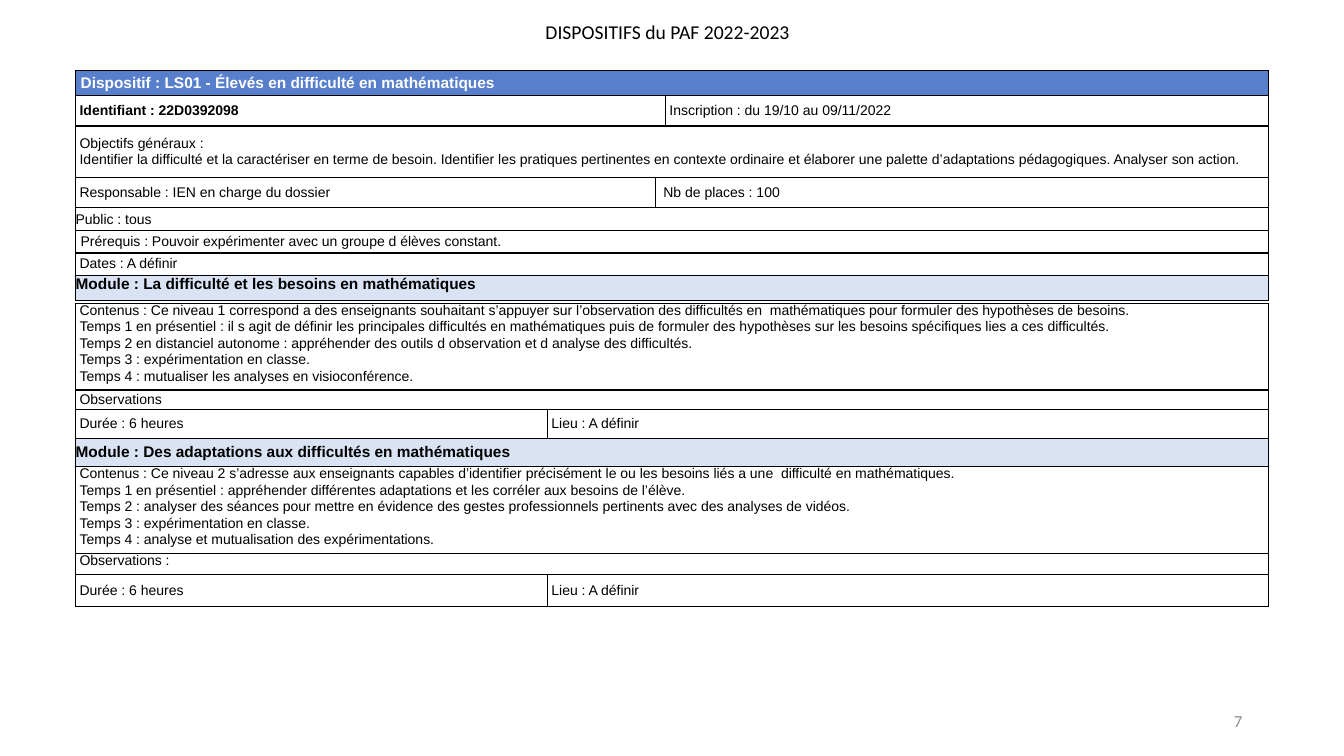
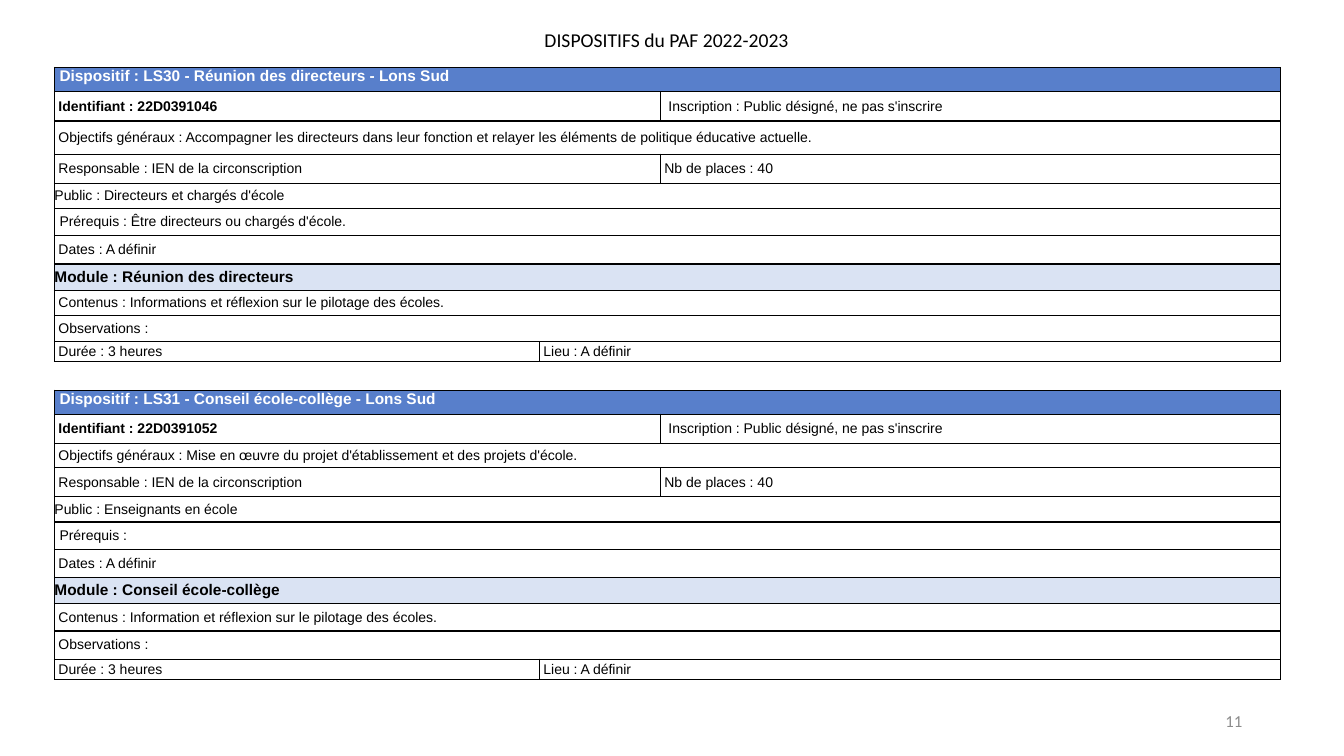
from dataclasses import dataclass, replace

from lxml import etree
from pptx import Presentation
from pptx.dml.color import RGBColor
from pptx.enum.text import MSO_ANCHOR, MSO_AUTO_SIZE, PP_ALIGN
from pptx.oxml.ns import qn
from pptx.util import Pt

TOP, MIDDLE = MSO_ANCHOR.TOP, MSO_ANCHOR.MIDDLE
LEFT, RIGHT = PP_ALIGN.LEFT, PP_ALIGN.RIGHT
NO_FIT = MSO_AUTO_SIZE.NONE
TITLE_ONLY = 5
SCALE = 9144  # EMU in one px, 100 px to the inch


@dataclass(frozen=True)
class Theme:
    black: str = "000000"
    white: str = "FFFFFF"
    blue: str = "587FCB"
    pale: str = "DAE3F3"
    grey: str = "8C8C8C"
    body: str = "Arial"
    display: str = "Calibri"
    title: int = 14
    number: int = 12
    head: int = 11
    text: int = 10
    border: int = 1


THEME = Theme()


@dataclass(frozen=True)
class Look:
    """How one table cell is set: indent in px, space before in points."""
    indent: int = 4
    before: float = 1.4
    size: int = THEME.text
    bold: bool = False
    color: str = THEME.black
    fill: str = ""
    anchor: MSO_ANCHOR = MIDDLE
    line: float = 1.0


PLAIN = Look()
HEAD = Look(5, 0.9, THEME.head, True, THEME.white, THEME.blue)
HEAD_TOP = replace(HEAD, anchor=TOP)
IDENT = Look(before=2.6, bold=True)
SIGNUP = Look(before=2.4)
SIGNUP_IN = Look(indent=8, before=0)
GOALS = Look(before=0.2, line=Pt(11.3))
OWNER = Look(before=2.2)
SEATS_IN = replace(OWNER, indent=8)
PUBLIC = Look(indent=0, before=0.5)
NEEDS = Look(indent=5)
DATES = Look(before=1.8)
MODULE = Look(0, 2.2, THEME.head, True, fill=THEME.pale)
MODULE_TOP = replace(MODULE, anchor=TOP)
STEPS = Look(before=0.9, anchor=TOP, line=0.97)
BRIEF = Look(before=0.7)
NOTE_TOP = Look(anchor=TOP)


def px(count):
    return count * SCALE


def style(para, font, size, color, bold=False):
    for run in para.runs:
        run.font.name = font
        run.font.size = Pt(size)
        run.font.bold = bold
        run.font.color.rgb = RGBColor.from_string(color)


def place(shape, left, top, width, height):
    shape.left, shape.top = px(left), px(top)
    shape.width, shape.height = px(width), px(height)


def label(shape, text, size, color, align, anchor):
    frame = shape.text_frame
    frame.text = text
    frame.auto_size = NO_FIT
    frame.word_wrap = False
    frame.vertical_anchor = anchor
    para = frame.paragraphs[0]
    para.alignment = align
    style(para, THEME.display, size, color)


def page(deck, left, top, number):
    """Add a slide with the shared title and its page number."""
    slide = deck.slides.add_slide(deck.slide_layouts[TITLE_ONLY])
    title = slide.shapes.title
    place(title, left, top, 271, 34)
    label(title, "DISPOSITIFS du PAF 2022-2023", THEME.title, THEME.black, LEFT, TOP)
    box = slide.shapes.add_textbox(px(942), px(695), px(300), px(40))
    label(box, number, THEME.number, THEME.grey, RIGHT, MIDDLE)
    return slide


def border(cell):
    props = cell._tc.get_or_add_tcPr()
    for side in ("lnL", "lnR", "lnT", "lnB"):
        line = etree.SubElement(props, qn(f"a:{side}"), w=str(Pt(THEME.border)))
        fill = etree.SubElement(line, qn("a:solidFill"))
        etree.SubElement(fill, qn("a:srgbClr"), val=THEME.black)


def write(cell, look, text):
    cell.margin_left = px(look.indent)
    cell.margin_right = cell.margin_top = cell.margin_bottom = 0
    cell.vertical_anchor = look.anchor
    if look.fill:
        cell.fill.solid()
        cell.fill.fore_color.rgb = RGBColor.from_string(look.fill)
    cell.text_frame.text = text
    for para in cell.text_frame.paragraphs:
        para.space_before = Pt(look.before)
        para.line_spacing = look.line
        style(para, THEME.body, look.size, look.color, look.bold)


def grid(slide, left, top, cols, rows):
    """Add a table and return its bottom; a row is (height, cells).

    None, or a missing last cell, joins the cell on its left.
    """
    height = sum(row[0] for row in rows)
    frame = slide.shapes.add_table(
        len(rows), len(cols), px(left), px(top), px(sum(cols)), px(height))
    table = frame.table
    table.first_row = table.horz_banding = False
    for col, width in zip(table.columns, cols):
        col.width = px(width)
    for r, (tall, cells) in enumerate(rows):
        table.rows[r].height = px(tall)
        for c in range(len(cols)):
            cell = table.cell(r, c)
            border(cell)
            cell.fill.background()
        starts = [c for c, item in enumerate(cells) if item]
        for c, end in zip(starts, starts[1:] + [len(cols)]):
            cell = table.cell(r, c)
            if end - c > 1:
                cell.merge(table.cell(r, end - 1))
            write(cell, *cells[c])
    return top + height


def closing(height, hours):
    return height, [(PLAIN, f"Durée : {hours} heures"), (PLAIN, "Lieu : A définir")]


def maths(deck):
    slide = page(deck, 531, 15, "7")
    left, halves = 75, (468, 715)
    end = grid(slide, left, 70, (575, 10, 598), [
        (25, [(HEAD, "Dispositif : LS01 - Élevés en difficulté en mathématiques")]),
        (30, [(IDENT, "Identifiant : 22D0392098"), None,
              (SIGNUP, "Inscription : du 19/10 au 09/11/2022")]),
        (51, [(GOALS, "Objectifs généraux :\n"
               "Identifier la difficulté et la caractériser en terme de besoin. "
               "Identifier les pratiques pertinentes en contexte ordinaire et élaborer "
               "une palette d’adaptations pédagogiques. Analyser son action.")]),
        (30, [(OWNER, "Responsable : IEN en charge du dossier"),
              (SEATS_IN, "Nb de places : 100")]),
        (23, [(PUBLIC, "Public : tous")]),
        (22, [(NEEDS, "Prérequis : Pouvoir expérimenter avec un groupe d élèves constant.")]),
        (22, [(DATES, "Dates : A définir")]),
        (25, [(MODULE_TOP, "Module : La difficulté et les besoins en mathématiques")]),
    ])
    end = grid(slide, left, end + 3, halves, [
        (86, [(STEPS,
               "Contenus : Ce niveau 1 correspond a des enseignants souhaitant s’appuyer "
               "sur l’observation des difficultés en  mathématiques pour formuler des "
               "hypothèses de besoins.\n"
               "Temps 1 en présentiel : il s agit de définir les principales difficultés "
               "en mathématiques puis de formuler des hypothèses sur les besoins "
               "spécifiques lies a ces difficultés.\n"
               "Temps 2 en distanciel autonome : appréhender des outils d observation "
               "et d analyse des difficultés.\n"
               "Temps 3 : expérimentation en classe.\n"
               "Temps 4 : mutualiser les analyses en visioconférence.")]),
        (19, [(PLAIN, "Observations")]),
        closing(29, 6),
        (28, [(MODULE, "Module : Des adaptations aux difficultés en mathématiques")]),
    ])
    grid(slide, left, end, halves, [
        (86, [(STEPS,
               "Contenus : Ce niveau 2 s’adresse aux enseignants capables d’identifier "
               "précisément le ou les besoins liés a une  difficulté en mathématiques.\n"
               "Temps 1 en présentiel : appréhender différentes adaptations et les "
               "corréler aux besoins de l’élève.\n"
               "Temps 2 : analyser des séances pour mettre en évidence des gestes "
               "professionnels pertinents avec des analyses de vidéos.\n"
               "Temps 3 : expérimentation en classe.\n"
               "Temps 4 : analyse et mutualisation des expérimentations.")]),
        (21, [(NOTE_TOP, "Observations :")]),
        closing(32, 6),
    ])


def meeting(slide, top, name, code, goals, public, needs, module, topic, tall):
    """Add a meeting's two joined tables; tall holds the heights that vary."""
    left = 54
    aim, brief, note, last = tall
    end = grid(slide, left, top, (601, 615), [
        (24, [(HEAD_TOP, f"Dispositif : {name} - Lons Sud")]),
        (29, [(IDENT, f"Identifiant : {code}"),
              (SIGNUP_IN, "Inscription : Public désigné, ne pas s'inscrire")]),
        (aim, [(GOALS, f"Objectifs généraux : {goals}")]),
        (29, [(OWNER, "Responsable : IEN de la circonscription"),
              (OWNER, "Nb de places : 40")]),
        (25, [(PUBLIC, f"Public : {public}")]),
        (27, [(NEEDS, f"Prérequis :{needs}")]),
        (28, [(DATES, "Dates : A définir")]),
        (26, [(MODULE, f"Module : {module}")]),
    ])
    return grid(slide, left, end, (481, 735), [
        (brief, [(BRIEF, f"Contenus : {topic} et réflexion sur le pilotage des écoles.")]),
        (note, [(PLAIN, "Observations :")]),
        closing(last, 3),
    ])


def meetings(deck):
    slide = page(deck, 530, 23, "11")
    end = meeting(
        slide, 67, "LS30 - Réunion des directeurs", "22D0391046",
        "Accompagner les directeurs dans leur fonction et relayer les éléments "
        "de politique éducative actuelle.",
        "Directeurs et chargés d'école", " Être directeurs ou chargés d'école.",
        "Réunion des directeurs", "Informations", (33, 25, 26, 20))
    meeting(
        slide, end + 28, "LS31 - Conseil école-collège", "22D0391052",
        "Mise en œuvre du projet d'établissement et des projets d'école.",
        "Enseignants en école", "", "Conseil école-collège", "Information",
        (24, 27, 28, 20))


def main():
    deck = Presentation()
    deck.slide_width, deck.slide_height = px(1333), px(750)
    maths(deck)
    meetings(deck)
    deck.save("out.pptx")


if __name__ == "__main__":
    main()
